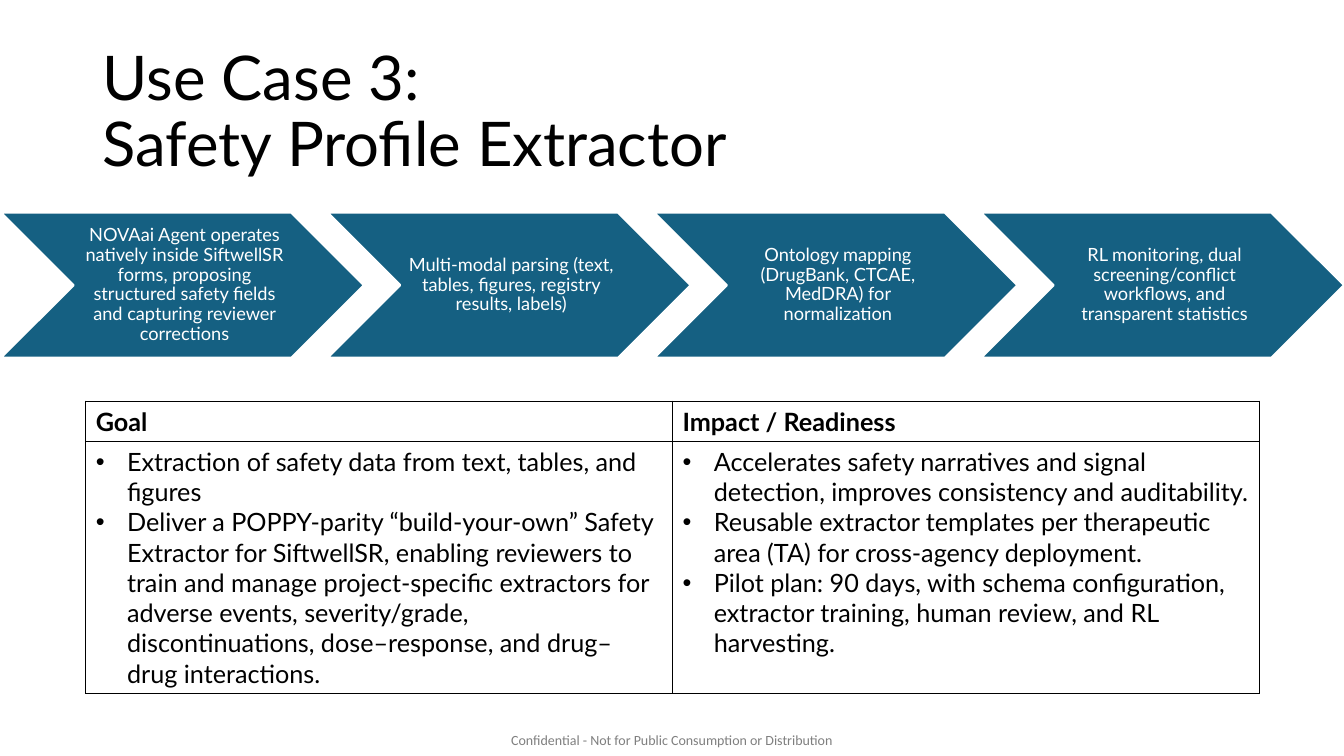
from lxml.etree import SubElement
from pptx import Presentation
from pptx.dml.color import RGBColor
from pptx.enum.shapes import MSO_SHAPE as Shape
from pptx.enum.text import MSO_ANCHOR as Anchor, MSO_AUTO_SIZE as AutoSize, PP_ALIGN as Align
from pptx.oxml import parse_xml
from pptx.oxml.ns import nsdecls, qn
from pptx.util import Pt

PX = 9144  # 100 px to the inch
BLACK = RGBColor(0x00, 0x00, 0x00)
WHITE = RGBColor(0xFF, 0xFF, 0xFF)
GREY = RGBColor(0x7F, 0x7F, 0x7F)
TEAL = RGBColor(0x15, 0x60, 0x82)

STEPS = [
    "NOVAai Agent operates natively inside SiftwellSR forms, proposing "
    "structured safety fields and capturing reviewer corrections",
    "Multi-modal parsing (text, tables, figures, registry results, labels)",
    "Ontology mapping (DrugBank, CTCAE, MedDRA) for normalization",
    "RL monitoring, dual screening/conflict workflows, and transparent statistics",
]
COLUMNS = {
    "Goal": [
        "Extraction of safety data from text, tables, and figures",
        "Deliver a POPPY-parity “build-your-own” Safety Extractor for SiftwellSR, "
        "enabling reviewers to train and manage project-specific extractors for "
        "adverse events, severity/grade, discontinuations, dose–response, and "
        "drug–drug interactions.",
    ],
    "Impact / Readiness": [
        "Accelerates safety narratives and signal detection, improves consistency "
        "and auditability.",
        "Reusable extractor templates per therapeutic area (TA) for cross-agency "
        "deployment.",
        "Pilot plan: 90 days, with schema configuration, extractor training, human "
        "review, and RL harvesting.",
    ],
}


def px(*lengths):
    return [length * PX for length in lengths]


def style(para, size, color, name="Lato", bold=False):
    font = para.font
    font.size, font.name, font.bold = Pt(size), name, bold
    font.color.rgb = color


deck = Presentation()
deck.slide_width, deck.slide_height = px(1333, 750)
page = deck.slides.add_slide(deck.slide_layouts[5])

# Title
title = page.shapes.title
title.left, title.top, title.width, title.height = px(92, 40, 1150, 145)
frame = title.text_frame
frame.text = "Use Case 3:\vSafety Profile Extractor"
frame.vertical_anchor = Anchor.MIDDLE
frame.auto_size = AutoSize.NONE
para = frame.paragraphs[0]
para.alignment, para.line_spacing = Align.LEFT, 0.9
style(para, 44, BLACK)

# Process chevrons
for index, step in enumerate(STEPS):
    chevron = page.shapes.add_shape(Shape.CHEVRON, *px(1 + 324 * index, 211, 360, 144))
    chevron.shadow.inherit = False
    chevron.fill.solid()
    chevron.fill.fore_color.rgb = TEAL
    chevron.line.color.rgb = WHITE
    chevron.line.width = Pt(1.5)
    frame = chevron.text_frame
    frame.word_wrap = True
    frame.vertical_anchor = Anchor.MIDDLE
    frame.margin_left, frame.margin_top, frame.margin_right, frame.margin_bottom = px(6, 2, 2, 2)
    frame.text = step
    para = frame.paragraphs[0]
    para.alignment, para.line_spacing = Align.CENTER, 0.9
    style(para, 13, WHITE)

# Goal and impact table
table = page.shapes.add_table(2, 2, *px(85, 398, 1164, 290)).table
table.first_row = table.horz_banding = False
table.rows[0].height, table.rows[1].height = px(40, 250)
for index, (heading, points) in enumerate(COLUMNS.items()):
    table.columns[index].width = 582 * PX
    header, body = table.cell(0, index), table.cell(1, index)
    header.text = heading
    style(header.text_frame.paragraphs[0], 18, BLACK, bold=True)
    body.text = "\n".join(points)
    for para in body.text_frame.paragraphs:
        properties = para._p.get_or_add_pPr()
        properties.set("marL", str(31 * PX))
        properties.set("indent", str(-31 * PX))
        SubElement(properties, qn("a:buFont")).set("typeface", "Arial")
        SubElement(properties, qn("a:buChar")).set("char", "•")
        style(para, 18, BLACK)
    for cell in (header, body):
        cell.fill.background()
        for position, side in enumerate(("lnL", "lnR", "lnT", "lnB")):
            border = parse_xml(
                f'<a:{side} {nsdecls("a")} w="{Pt(1)}"><a:solidFill>'
                f'<a:srgbClr val="{BLACK}"/></a:solidFill></a:{side}>'
            )
            cell._tc.get_or_add_tcPr().insert(position, border)

# Confidentiality footer
footer = page.shapes.add_textbox(*px(507, 726, 323, 17))
frame = footer.text_frame
frame.margin_left = frame.margin_top = frame.margin_right = frame.margin_bottom = 0
frame.text = "Confidential - Not for Public Consumption or Distribution"
style(frame.paragraphs[0], 10, GREY, "Calibri")

deck.save("out.pptx")
